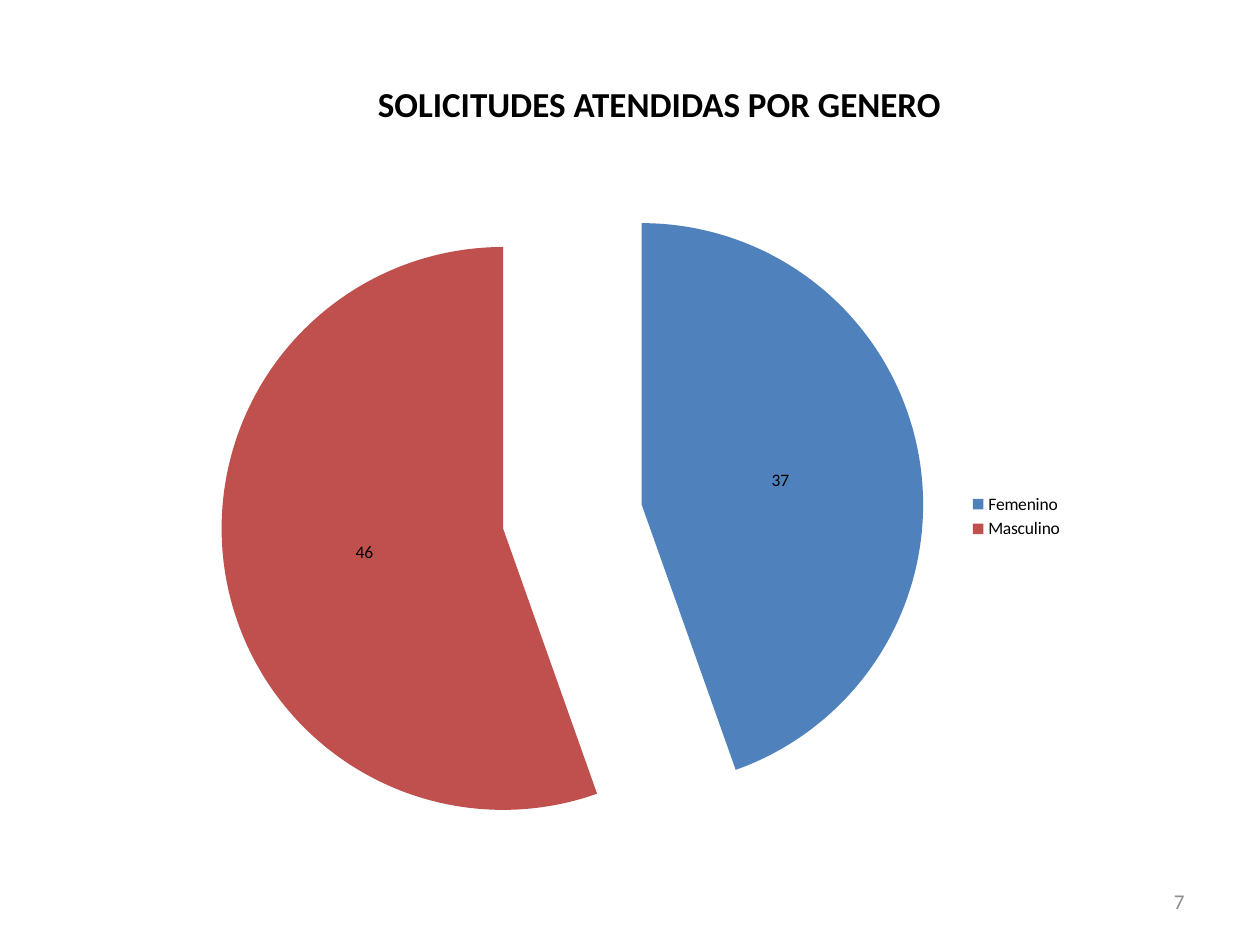
from typing import NamedTuple

from pptx import Presentation
from pptx.chart.data import CategoryChartData
from pptx.dml.color import RGBColor
from pptx.enum.chart import XL_CHART_TYPE, XL_LABEL_POSITION, XL_LEGEND_POSITION
from pptx.enum.text import MSO_ANCHOR, PP_ALIGN
from pptx.oxml import parse_xml
from pptx.oxml.ns import nsdecls
from pptx.util import Pt

PIE = XL_CHART_TYPE.PIE
LABEL_CENTER = XL_LABEL_POSITION.CENTER
LEGEND_RIGHT = XL_LEGEND_POSITION.RIGHT
MIDDLE = MSO_ANCHOR.MIDDLE
CENTER, RIGHT = PP_ALIGN.CENTER, PP_ALIGN.RIGHT

EMU_PER_PX = 9144  # 100 px to the inch
FONT = "Calibri"
BLACK, GREY = "000000", "8C8C8C"
EXPLOSION = 25


class Box(NamedTuple):
    left: int
    top: int
    width: int
    height: int


class Gender(NamedTuple):
    name: str
    requests: int
    color: str


GENDERS = [Gender("Femenino", 37, "4F81BD"), Gender("Masculino", 46, "C0504D")]


def px(n: int) -> int:
    return n * EMU_PER_PX


def rgb(color: str) -> RGBColor:
    return RGBColor.from_string(color)


def emu(box: Box) -> list[int]:
    return [px(n) for n in box]


def set_font(font, size: int, color: str, bold: bool = False) -> None:
    for name, value in {"name": FONT, "size": Pt(size), "bold": bold}.items():
        setattr(font, name, value)
    font.color.rgb = rgb(color)


def write(s, text: str, align, size: int, color: str, bold: bool = False) -> None:
    tf = s.text_frame
    tf.word_wrap = True
    tf.vertical_anchor = MIDDLE
    p = tf.paragraphs[0]
    p.alignment = align
    r = p.add_run()
    r.text = text
    set_font(r.font, size, color, bold)


def add_gender_pie(slide, box: Box) -> None:
    data = CategoryChartData()
    data.categories = [g.name for g in GENDERS]
    data.add_series("Solicitudes", [g.requests for g in GENDERS])
    chart = slide.shapes.add_chart(PIE, *emu(box), data).chart
    set_font(chart.font, 10, BLACK)
    chart.has_title = False
    chart.has_legend = True
    chart.legend.position = LEGEND_RIGHT
    chart.legend.include_in_layout = False

    plot = chart.plots[0]
    plot.vary_by_categories = True
    plot.has_data_labels = True
    labels = plot.data_labels
    labels.show_value = True
    labels.show_percentage = False
    labels.position = LABEL_CENTER
    set_font(labels.font, 10, BLACK)

    series = plot.series[0]
    for i, gender in enumerate(GENDERS):
        fill = series.points[i].format.fill
        fill.solid()
        fill.fore_color.rgb = rgb(gender.color)
    explosion = parse_xml(f'<c:explosion {nsdecls("c")} val="{EXPLOSION}"/>')
    series._element.xpath("c:dPt")[0].addprevious(explosion)


def main() -> None:
    prs = Presentation()
    prs.slide_width, prs.slide_height = px(1000), px(750)
    slide = prs.slides.add_slide(prs.slide_layouts[5])

    title = slide.shapes.title
    title.left, title.top, title.width, title.height = emu(Box(211, 55, 625, 55))
    write(title, "SOLICITUDES ATENDIDAS POR GENERO", CENTER, 20, BLACK, bold=True)

    page_number = slide.shapes.add_textbox(*emu(Box(717, 695, 233, 40)))
    write(page_number, "7", RIGHT, 12, GREY)

    add_gender_pie(slide, Box(141, 117, 713, 586))
    prs.save("out.pptx")


if __name__ == "__main__":
    main()
